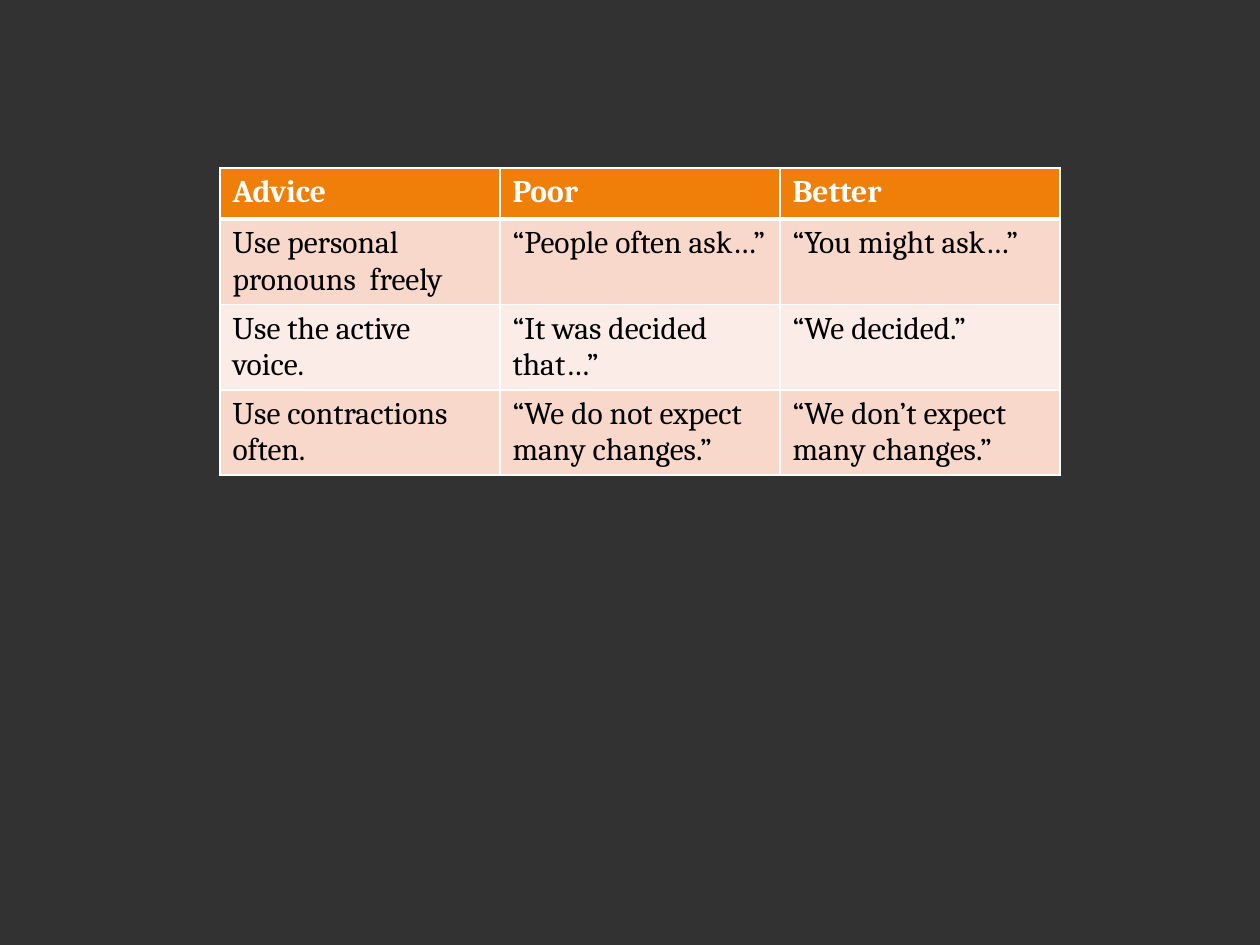
import pptx
import pptx.dml.color
import pptx.oxml
import pptx.oxml.ns
import pptx.util

RGBColor = pptx.dml.color.RGBColor

# Content
HEADER = ("Advice", "Poor", "Better")
EXAMPLES = [
    ("Use personal pronouns  freely", "“People often ask…”", "“You might ask…”"),
    ("Use the active voice.", "“It was decided that…”", "“We decided.”"),
    ("Use contractions often.", "“We do not expect many changes.”",
     "“We don’t expect many changes.”"),
]

# Style
BACKGROUND = RGBColor(0x32, 0x32, 0x32)
ORANGE = RGBColor(0xF0, 0x7F, 0x09)
BANDS = (RGBColor(0xF9, 0xD8, 0xCC), RGBColor(0xFC, 0xEC, 0xE7))
WHITE = RGBColor(0xFF, 0xFF, 0xFF)
BLACK = RGBColor(0x00, 0x00, 0x00)
FONT = "Cambria"
TEXT_SIZE = 18
THIN, THICK = 1, 3

# Lengths in px
PX = pptx.util.Inches(1) // 126
PAGE_WIDTH, PAGE_HEIGHT = 1260, 945
TABLE_LEFT, TABLE_TOP, TABLE_HEIGHT = 220, 168, 354
COLUMN_WIDTH, ROW_HEIGHT = 280, 51


def add_border(cell, side, points):
    line = pptx.oxml.parse_xml(
        f'<a:{side} {pptx.oxml.ns.nsdecls("a")} w="{pptx.util.Pt(points)}">'
        f'<a:solidFill><a:srgbClr val="{WHITE}"/></a:solidFill></a:{side}>')
    cell._tc.get_or_add_tcPr().append(line)


def style_cell(cell, text, fill, color, bold, top, bottom):
    # Borders come before the fill in the cell properties
    for side, points in (("lnL", THIN), ("lnR", THIN), ("lnT", top), ("lnB", bottom)):
        add_border(cell, side, points)
    cell.fill.solid()
    cell.fill.fore_color.rgb = fill
    span = cell.text_frame.paragraphs[0].add_run()
    span.text = text
    span.font.name = FONT
    span.font.size = pptx.util.Pt(TEXT_SIZE)
    span.font.bold = bold
    span.font.color.rgb = color


def main():
    deck = pptx.Presentation()
    deck.slide_width, deck.slide_height = PAGE_WIDTH * PX, PAGE_HEIGHT * PX
    page = deck.slides.add_slide(deck.slide_layouts[6])
    page.background.fill.solid()
    page.background.fill.fore_color.rgb = BACKGROUND

    # Advice table
    rows = [HEADER, *EXAMPLES]
    frame = page.shapes.add_table(
        len(rows), len(HEADER), TABLE_LEFT * PX, TABLE_TOP * PX,
        COLUMN_WIDTH * len(HEADER) * PX, TABLE_HEIGHT * PX)
    table = frame.table
    for column in table.columns:
        column.width = COLUMN_WIDTH * PX
    for row in table.rows:
        row.height = ROW_HEIGHT * PX  # rows grow to fit two lines
    frame.height = TABLE_HEIGHT * PX

    # Header row, then alternating bands
    for r, texts in enumerate(rows):
        is_header = r == 0
        fill = ORANGE if is_header else BANDS[(r - 1) % 2]
        color = WHITE if is_header else BLACK
        top = THICK if r == 1 else THIN
        bottom = THICK if is_header else THIN
        for c, text in enumerate(texts):
            style_cell(table.cell(r, c), text, fill, color, is_header, top, bottom)

    deck.save("out.pptx")


if __name__ == "__main__":
    main()
